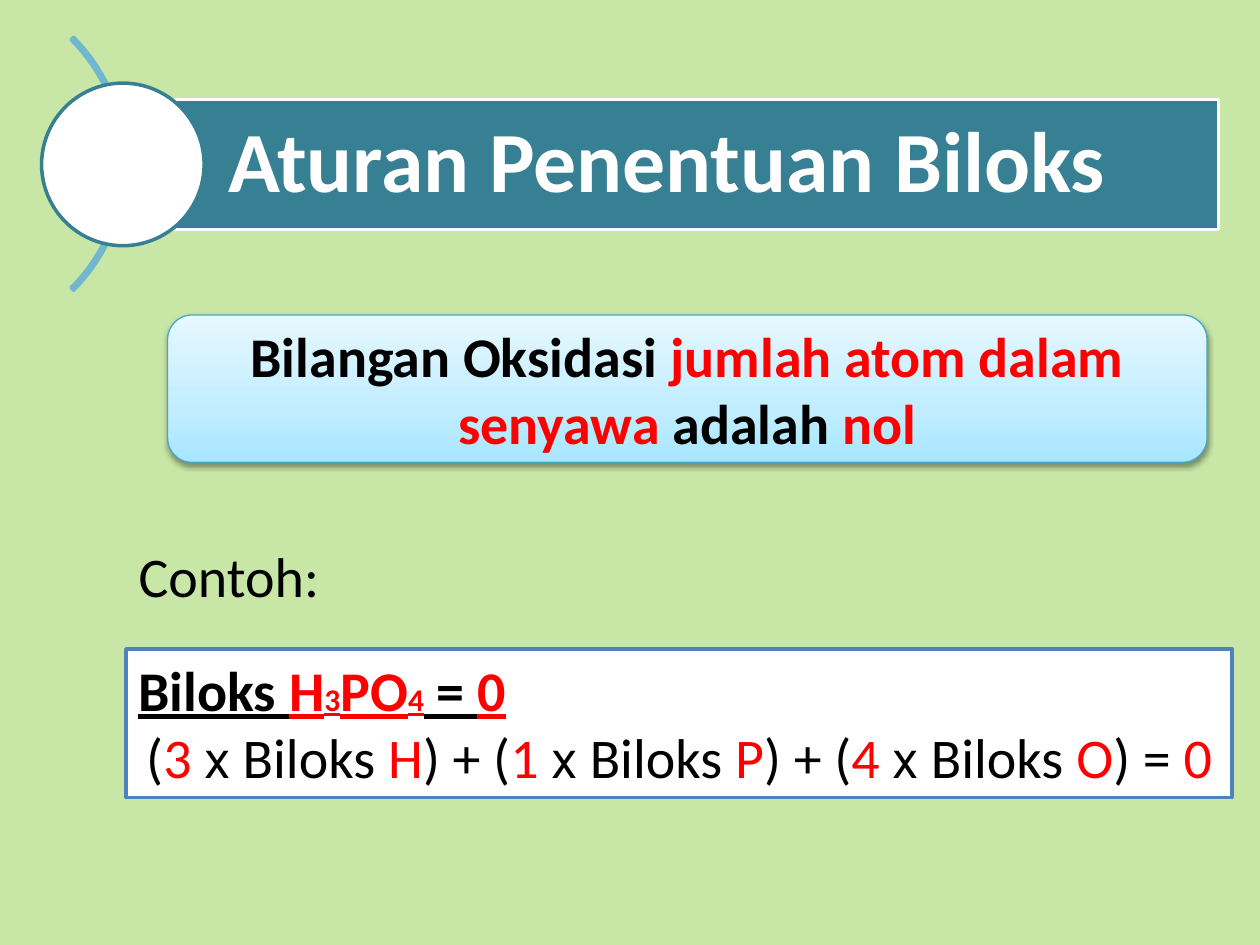
"""Build the slide on rules for determining oxidation numbers."""
import pptx
import pptx.dml.color
import pptx.enum.shapes
import pptx.enum.text
import pptx.oxml
import pptx.oxml.ns
import pptx.util

Inches, Pt = pptx.util.Inches, pptx.util.Pt
SHAPE = pptx.enum.shapes.MSO_SHAPE
ALIGN = pptx.enum.text.PP_ALIGN
ANCHOR = pptx.enum.text.MSO_ANCHOR
NO_FIT = pptx.enum.text.MSO_AUTO_SIZE.NONE

THEME = {
    "font": "Calibri", "math_font": "Cambria",
    "title_size": 49, "body_size": 32, "index_size": 18,
    "background": "C8E7A7", "ink": "000000", "accent": "FF0000", "white": "FFFFFF",
    "banner": "377F92", "arc": "71B7CD", "rule_line": "46AAC5", "example_line": "4F81BD",
    "rule_stops": [(0, "A7E6FF"), (35, "C1EDFF"), (100, "E7F8FF")],
}
STYLES = {
    "ink": {"color": "ink"},
    "accent": {"color": "accent"},
    "index": {"color": "accent", "size": "index_size"},
    "times": {"color": "ink", "font": "math_font"},
}

TITLE = "Aturan Penentuan Biloks"
RULE = [("Bilangan Oksidasi ", "ink"), ("jumlah atom dalam senyawa ", "accent"),
        ("adalah ", "ink"), ("nol", "accent")]
EXAMPLE_LABEL = "Contoh:"
FORMULA = [("Biloks ", "ink"), ("H", "accent"), ("3", "index"), ("PO", "accent"),
           ("4", "index"), (" = ", "ink"), ("0", "accent")]
ATOMS = [("3", "H"), ("1", "P"), ("4", "O")]


def rgb(name):
    return pptx.dml.color.RGBColor.from_string(THEME[name])


def place(shape, left, top, width, height):
    shape.left, shape.top = Inches(left), Inches(top)
    shape.width, shape.height = Inches(width), Inches(height)


def paint(shape, fill, line, weight=2):
    if fill:
        shape.fill.solid()
        shape.fill.fore_color.rgb = rgb(fill)
    shape.line.color.rgb = rgb(line)
    shape.line.width = Pt(weight)


def add_shape(slide, kind, box, fill, line, weight=2):
    shape = slide.shapes.add_shape(kind, *map(Inches, box))
    shape.shadow.inherit = False
    paint(shape, fill, line, weight)
    return shape


def set_font(font, size, color, bold=False):
    font.name, font.size, font.bold = THEME["font"], Pt(THEME[size]), bold
    font.color.rgb = rgb(color)


def write(paragraph, pieces, align, bold=False, underline=False):
    paragraph.alignment = align
    set_font(paragraph.font, "body_size", "ink", bold)
    paragraph.font.underline = underline
    for text, style_name in pieces:
        style = STYLES[style_name]
        run = paragraph.add_run()
        run.text = text
        set_font(run.font, style.get("size", "body_size"), style["color"], bold)
        run.font.name = THEME[style.get("font", "font")]
        run.font.underline = underline


def add_gradient_and_shadow(shape):
    ns = pptx.oxml.ns.nsdecls("a")
    stops = "".join(f'<a:gs pos="{pos * 1000}"><a:srgbClr val="{color}"/></a:gs>'
                    for pos, color in THEME["rule_stops"])
    properties = shape.element.spPr
    properties.insert(2, pptx.oxml.parse_xml(
        f'<a:gradFill {ns} rotWithShape="1"><a:gsLst>{stops}</a:gsLst>'
        '<a:lin ang="16200000" scaled="1"/></a:gradFill>'))
    effects = properties.find(pptx.oxml.ns.qn("a:effectLst"))
    effects.append(pptx.oxml.parse_xml(
        f'<a:outerShdw {ns} blurRad="{Pt(3.1)}" dist="{Pt(1.6)}" dir="5400000" rotWithShape="0">'
        '<a:srgbClr val="000000"><a:alpha val="38000"/></a:srgbClr></a:outerShdw>'))


def build_title(slide):
    banner = slide.shapes.title
    place(banner, 0.98, 0.79, 8.69, 1.03)
    paint(banner, "banner", "white")
    frame = banner.text_frame
    frame.text = TITLE
    frame.auto_size, frame.vertical_anchor = NO_FIT, ANCHOR.MIDDLE
    frame.margin_left = Inches(0.83)
    frame.margin_top = frame.margin_right = frame.margin_bottom = Inches(0.14)
    heading = frame.paragraphs[0]
    heading.alignment, heading.line_spacing = ALIGN.LEFT, 0.9
    set_font(heading.font, "title_size", "white", True)

    arc = add_shape(slide, SHAPE.BLOCK_ARC, (-1.84, -0.12, 2.84, 2.84), None, "arc")
    arc.fill.background()
    for index, value in enumerate((189, 27, 0.01)):
        arc.adjustments[index] = value
    slide.shapes._spTree.insert(2, arc.element)
    add_shape(slide, SHAPE.OVAL, (0.33, 0.66, 1.29, 1.29), "white", "banner")


def build_rule(slide):
    rule = add_shape(slide, SHAPE.ROUNDED_RECTANGLE, (1.33, 2.5, 8.25, 1.17),
                     None, "rule_line", 0.75)
    add_gradient_and_shadow(rule)
    rule.text_frame.vertical_anchor = ANCHOR.MIDDLE
    write(rule.text_frame.paragraphs[0], RULE, ALIGN.CENTER, bold=True)


def build_example(slide):
    label = slide.placeholders[1]
    place(label, 1, 4.25, 1.88, 0.55)
    label.text_frame.text = EXAMPLE_LABEL
    label.text_frame.auto_size = NO_FIT
    paragraph = label.text_frame.paragraphs[0]
    properties = paragraph._p.get_or_add_pPr()
    properties.set("marL", "0")
    properties.set("indent", "0")
    properties.append(pptx.oxml.parse_xml(f'<a:buNone {pptx.oxml.ns.nsdecls("a")}/>'))
    paragraph.space_before = Pt(0)
    set_font(paragraph.font, "body_size", "ink")

    equation = []
    for position, (count, atom) in enumerate(ATOMS):
        equation += [(") + (" if position else "(", "ink"), (f"{count} ", "accent"),
                     ("𝗑 ", "times"), ("Biloks ", "ink"), (atom, "accent")]
    equation += [(") = ", "ink"), ("0", "accent")]

    example = add_shape(slide, SHAPE.RECTANGLE, (1, 5.15, 8.78, 1.18), "white", "example_line")
    frame = example.text_frame
    frame.word_wrap, frame.vertical_anchor = True, ANCHOR.TOP
    write(frame.paragraphs[0], FORMULA, ALIGN.LEFT, bold=True, underline=True)
    write(frame.add_paragraph(), equation, ALIGN.CENTER)


def main():
    deck = pptx.Presentation()
    deck.slide_width, deck.slide_height = Inches(10), Inches(7.5)
    slide = deck.slides.add_slide(deck.slide_layouts[1])
    slide.background.fill.solid()
    slide.background.fill.fore_color.rgb = rgb("background")
    build_title(slide)
    build_rule(slide)
    build_example(slide)
    deck.save("out.pptx")


if __name__ == "__main__":
    main()
